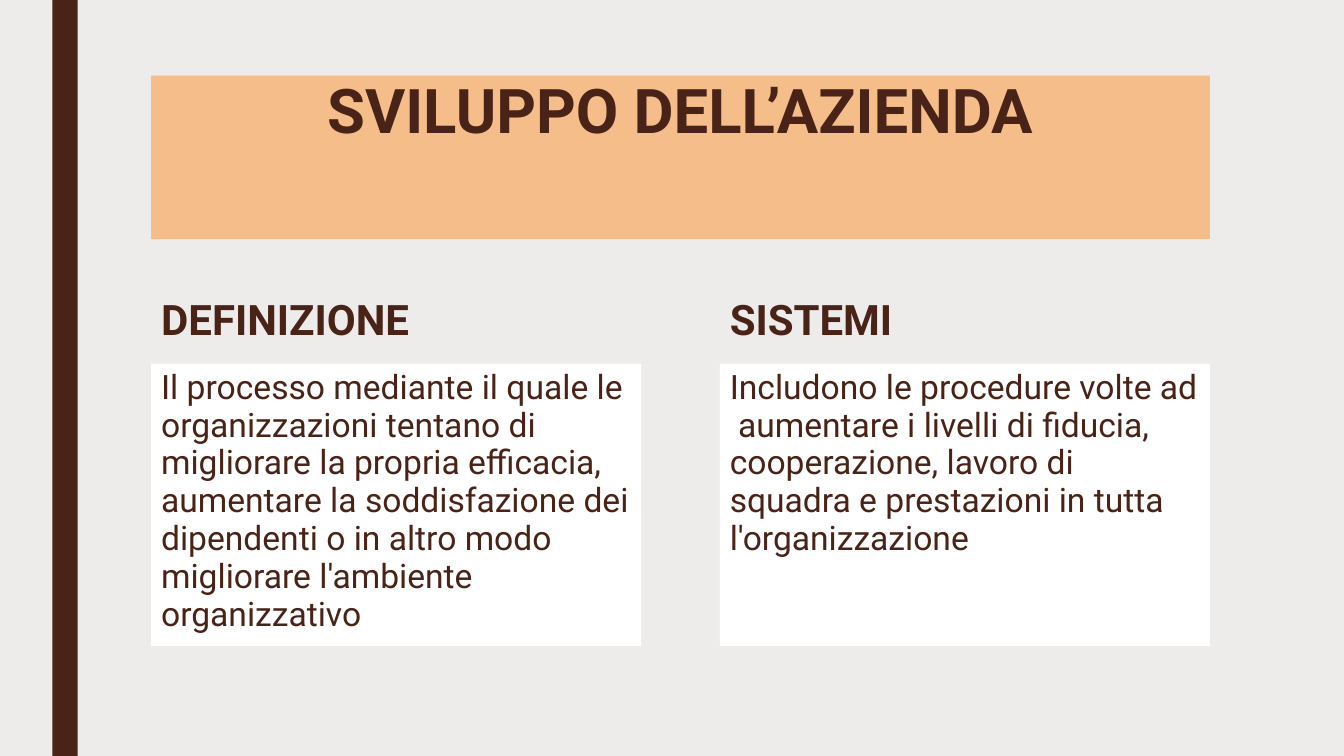
from pptx import Presentation
from pptx.dml.color import RGBColor
from pptx.enum import shapes, text
from pptx.util import Inches, Pt

COLORS = {"background": "EDECEB", "brown": "4A2318", "peach": "F5BD89", "white": "FFFFFF"}
FONT = "Roboto"
LEFT = 1.5
COLUMN_WIDTH = 4.86
COLUMN_STEP = 5.64

COLUMNS = [
    (
        "DEFINIZIONE",
        "Il processo mediante il quale le organizzazioni tentano di migliorare "
        "la propria efficacia, aumentare la soddisfazione dei dipendenti o in "
        "altro modo migliorare l'ambiente organizzativo",
    ),
    (
        "SISTEMI",
        "Includono le procedure volte ad  aumentare i livelli di fiducia, "
        "cooperazione, lavoro di squadra e prestazioni in tutta l'organizzazione",
    ),
]


def paint(fill, color):
    fill.solid()
    fill.fore_color.rgb = RGBColor.from_string(COLORS[color])


def write(box, words, size, spacing, bold=False, align=text.PP_ALIGN.LEFT,
          anchor=text.MSO_ANCHOR.TOP):
    frame = box.text_frame
    frame.text = words
    frame.word_wrap = True
    frame.auto_size = text.MSO_AUTO_SIZE.NONE
    frame.vertical_anchor = anchor
    para = frame.paragraphs[0]
    para.alignment = align
    para.line_spacing = spacing
    para.space_before = Pt(0)
    font = para.runs[0].font
    font.name = FONT
    font.size = Pt(size)
    font.bold = bold
    font.color.rgb = RGBColor.from_string(COLORS["brown"])


def add_side_bar(page):
    bar = page.shapes.add_shape(
        shapes.MSO_SHAPE.RECTANGLE, Inches(0.52), Inches(0), Inches(0.25), Inches(7.5)
    )
    bar.shadow.inherit = False
    paint(bar.fill, "brown")
    bar.line.fill.background()


def format_title(page, words):
    title = page.shapes.title
    title.left, title.top = Inches(LEFT), Inches(0.75)
    title.width, title.height = Inches(10.5), Inches(1.62)
    paint(title.fill, "peach")
    write(title, words, 44, 0.89, bold=True, align=text.PP_ALIGN.CENTER)


def add_column(page, left, heading, body):
    heading_box = page.shapes.add_textbox(
        Inches(left), Inches(2.56), Inches(COLUMN_WIDTH), Inches(0.9)
    )
    write(heading_box, heading, 30, 0.84, bold=True, anchor=text.MSO_ANCHOR.BOTTOM)

    body_box = page.shapes.add_textbox(
        Inches(left), Inches(3.61), Inches(COLUMN_WIDTH), Inches(2.8)
    )
    paint(body_box.fill, "white")
    write(body_box, body, 24, 0.94)


def main():
    deck = Presentation()
    deck.slide_width, deck.slide_height = Inches(13.33), Inches(7.5)
    page = deck.slides.add_slide(deck.slide_layouts[5])
    paint(page.background.fill, "background")
    add_side_bar(page)
    format_title(page, "SVILUPPO DELL’AZIENDA")
    for index, (heading, body) in enumerate(COLUMNS):
        add_column(page, LEFT + index * COLUMN_STEP, heading, body)
    deck.save("out.pptx")


if __name__ == "__main__":
    main()
